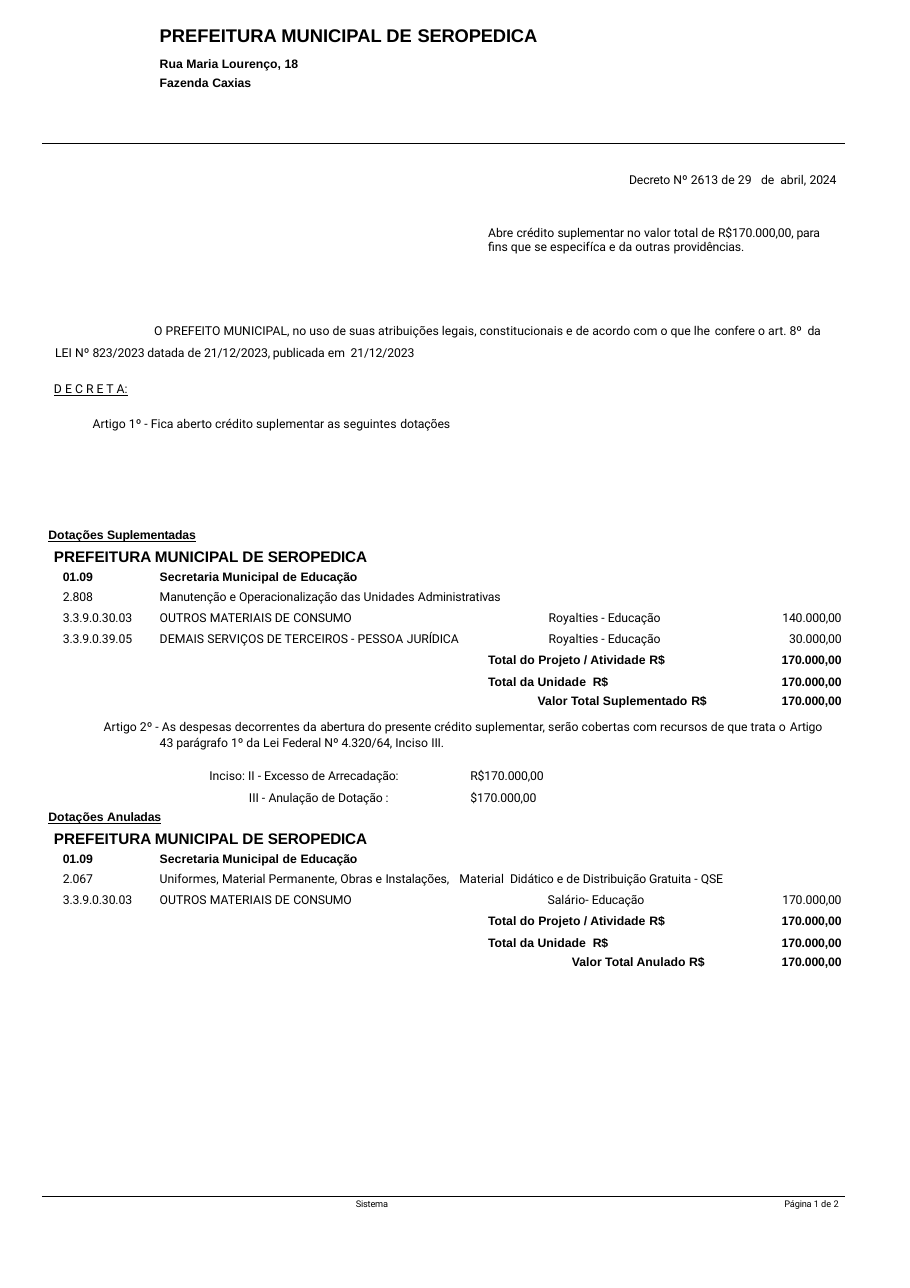
from collections import namedtuple
from dataclasses import dataclass

from lxml.etree import SubElement
from pptx import Presentation
from pptx.dml.color import RGBColor
from pptx.enum.shapes import MSO_CONNECTOR as CONN
from pptx.enum.text import MSO_ANCHOR as ANCHOR, MSO_AUTO_SIZE as AUTO, PP_ALIGN as ALIGN
from pptx.oxml.ns import qn
from pptx.util import Inches, Pt


@dataclass(frozen=True)
class Theme:
    ink: RGBColor = RGBColor(0, 0, 0)
    head_font: str = "Arial"
    body_font: str = "Roboto"
    title: float = 12
    section: float = 10
    body: float = 8
    small: float = 6
    rule: float = 0.75
    tight: float = -0.1


T = Theme()
Box = namedtuple("Box", "x y w h")
CITY = "PREFEITURA MUNICIPAL DE |SEROPEDICA"
CODE_INDENT, NAME_INDENT = 0.03, 0.11


def spaced_runs(runs):
    for item in [runs] if isinstance(runs, str) else runs:
        if isinstance(item, tuple):
            yield item
        else:
            for i, text in enumerate(item.split("|")):
                if text:
                    yield text, T.tight if i % 2 else 0


def write(p, runs, size=T.body, bold=False, underline=False, left=0, hang=0,
          line=None, before=None, align=ALIGN.LEFT):
    pPr = p._p.get_or_add_pPr()
    pPr.set("marL", str(Inches(left)))
    pPr.set("indent", str(Inches(hang)))
    p.alignment = align
    if line:
        p.line_spacing = line
    if before:
        p.space_before = Pt(before)
    for text, spacing in spaced_runs(runs):
        r = p.add_run()
        r.text = text
        f = r.font
        f.name = T.head_font if bold else T.body_font
        f.size, f.bold, f.underline = Pt(size), bold, underline
        f.color.rgb = T.ink
        if spacing:
            r._r.get_or_add_rPr().set("spc", str(round(spacing * 100)))


def clear_frame(tf):
    tf.word_wrap, tf.auto_size = True, AUTO.NONE
    tf.vertical_anchor = ANCHOR.TOP
    tf.margin_left = tf.margin_top = tf.margin_right = tf.margin_bottom = 0


def text_box(s, box, *paragraphs):
    tf = s.shapes.add_textbox(*map(Inches, box)).text_frame
    clear_frame(tf)
    for i, (runs, style) in enumerate(paragraphs):
        write(tf.add_paragraph() if i else tf.paragraphs[0], runs, **style)


def rule(s, x, y, w):
    line = s.shapes.add_connector(CONN.STRAIGHT, *map(Inches, (x, y, x + w, y)))
    line.line.color.rgb, line.line.width = T.ink, Pt(T.rule)
    SubElement(line._element.spPr, qn("a:effectLst"))


def header(s, box):
    title = s.shapes.title
    title.left, title.top = Inches(box.x + 1.07), Inches(box.y)
    title.width, title.height = Inches(4), Inches(0.22)
    clear_frame(title.text_frame)
    write(title.text_frame.paragraphs[0], CITY, size=T.title, bold=True)
    address = dict(bold=True, line=1.25)
    text_box(s, Box(box.x + 1.07, box.y + 0.26, 3, 0.34),
             ("Rua Maria Lourenço,| 18", address), ("Fazenda |Caxias", address))
    rule(s, box.x, box.y + box.h, box.w)


def preamble(s, box):
    text_box(s, Box(box.x + 5.23, box.y, 1.99, 0.16),
             (["|Decreto |Nº 2613 de 29", (" ", 4), "de", (" ", 1.8), "abril, |2024"], {}))
    text_box(s, Box(box.x + 3.95, box.y + 0.49, 3.11, 0.29),
             ("Abre crédito |suplementar |no valor total de |R$170.000,00, para |"
              "fins que se especifíca e da outras |providências.", dict(line=Pt(9.2))))
    text_box(s, Box(box.x, box.y + 1.31, box.w, 1.06),
             (["O PREFEITO MUNICIPAL, no uso de suas atribuições legais, constitucionais e "
               "de acordo com o que lhe |confere |o art. 8º", (" ", 1.5),
               "|da| LEI Nº |823/2023 datada| de |21/12/2023, publicada| em", (" ", 1.5),
               "|21/12/2023"],
              dict(left=0.02, hang=0.9, line=1.48)),
             ("D E C R E T A:", dict(left=0.01, underline=True, before=14.4)),
             ("Artigo 1º - Fica aberto crédito suplementar as seguintes |dotações",
              dict(left=0.36, before=13)))


def allocations(s, box, heading, widths, rows, merges):
    text_box(s, Box(box.x, box.y, 3, 0.36),
             (heading, dict(left=0.01, bold=True, underline=True)),
             (CITY, dict(left=0.06, size=T.section, bold=True, before=3.4)))
    area = Box(box.x + 0.11, box.y + 0.39, sum(widths), sum(row[0] for row in rows))
    table = s.shapes.add_table(len(rows), len(widths), *map(Inches, area)).table
    table.first_row = table.horz_banding = False
    for col, width in zip(table.columns, widths):
        col.width = Inches(width)
    for top, left, bottom, right in merges:
        table.cell(top, left).merge(table.cell(bottom, right))
    for i, (height, inset, bold, line, cells) in enumerate(rows):
        table.rows[i].height = Inches(height)
        for j in range(len(widths)):
            cell = table.cell(i, j)
            cell.fill.background()
            cell.margin_left = cell.margin_bottom = 0
            cell.margin_top = Inches(inset)
            cell.margin_right = Inches(0.03 if j == 3 else 0)
            p = cell.text_frame.paragraphs[0]
            if j in cells:
                runs, indent = cells[j]
                write(p, runs, bold=bold, left=indent, line=line,
                      align=ALIGN.RIGHT if j == 3 else ALIGN.LEFT)
            else:
                SubElement(p._p, qn("a:endParaRPr")).set("sz", str(T.body * 100))


def unit_row():
    return (0.16, 0, True, Pt(8.8),
            {0: ("|01.09", CODE_INDENT), 1: ("Secretaria Municipal de |Educação", NAME_INDENT)})


def activity_row(code, name, more=None):
    cells = {0: (code, CODE_INDENT), 1: (name, NAME_INDENT)}
    if more:
        cells[2] = (more, 0.02)
    return 0.19, 0.02, False, None, cells


def item_row(height, code, name, source, indent, amount):
    return (height, 0.02, False, None,
            {0: (code, CODE_INDENT), 1: (name, NAME_INDENT),
             2: (source, indent), 3: (amount, 0)})


def total_rows(first_height, first_inset, column, indent, label, label_indent):
    amount = ("|170.000,00", 0)
    return [
        (first_height, first_inset, True, None,
         {column: ("Total do Projeto / Atividade |R$", indent), 3: amount}),
        (0.19, 0.03, True, None,
         {column: (["Total da Unidade", (" ", 2), "|R$"], indent), 3: amount}),
        (0.15, 0.02, True, Pt(8.7), {column: (label, label_indent), 3: amount}),
    ]


def funding(s, box):
    text_box(s, Box(box.x, box.y + 0.01, 6.58, 0.32),
             ("Artigo 2º - As despesas decorrentes da |abertura |do |presente |crédito "
              "suplementar, serão cobertas com recursos de que trata o |Artigo |"
              "43| parágrafo |1º da Lei| Federal |Nº| 4.320/64, |Inciso |III.",
              dict(left=0.53, hang=-0.51, line=1.09)))
    text_box(s, Box(box.x + 0.97, box.y + 0.4, 2, 0.42),
             ("Inciso: II -| Excesso |de| Arrecadação:", dict(left=0.01, line=1.48)),
             ("III - |Anulação |de |Dotação :", dict(left=0.37, line=1.48)))
    text_box(s, Box(box.x + 3.34, box.y + 0.46, 1, 0.34),
             ("|R$170.000,00", dict(left=0.01)),
             ("|$170.000,00", dict(left=0.01, before=5)))


def footer(s, box):
    rule(s, box.x, box.y, box.w)
    for offset, text in ((2.85, "|Sistema"), (6.74, "|Página |1 de |2")):
        text_box(s, Box(box.x + offset, box.y + 0.02, 0.6, box.h), (text, dict(size=T.small)))


def main():
    prs = Presentation()
    prs.slide_width, prs.slide_height = Inches(8.26), Inches(11.69)
    s = prs.slides.add_slide(prs.slide_layouts[5])
    header(s, Box(0.38, 0.22, 7.29, 1.08))
    preamble(s, Box(0.48, 1.56, 7.09, 2.37))
    royalties = "Royalties - |Educação"
    supplies = ("|3.3.9.0.30.03", "OUTROS MATERIAIS DE |CONSUMO")
    allocations(
        s, Box(0.43, 4.79, 7.24, 1.65), "Dotações |Suplementadas", [0.8, 3.45, 1.96, 0.92],
        [unit_row(),
         activity_row("|2.808",
                      "|Manutenção |e |Operacionalização |das Unidades |Administrativas"),
         item_row(0.19, *supplies, royalties, 0.19, "|140.000,00"),
         item_row(0.16, "|3.3.9.0.39.05", "DEMAIS SERVIÇOS DE TERCEIROS - PESSOA |JURÍDICA",
                  royalties, 0.19, "|30.000,00"),
         *total_rows(0.22, 0.05, 0, 3.89, "Valor Total Suplementado |R$", 4.34)],
        [(0, 2, 1, 3)] + [(i, 0, i, 2) for i in (4, 5, 6)])
    funding(s, Box(0.92, 6.51, 6.6, 0.82))
    allocations(
        s, Box(0.43, 7.35, 7.24, 1.46), "Dotações |Anuladas", [0.8, 2.81, 2.71, 0.81],
        [unit_row(),
         activity_row("|2.067", "Uniformes, |Material |Permanente, Obras e |Instalações,",
                      ["Material", (" ", 1.8),
                       "|Didático |e de |Distribuição Gratuita |- |QSE"]),
         item_row(0.19, *supplies, "Salário- |Educação", 0.82, "|170.000,00"),
         *total_rows(0.19, 0.02, 2, 0.28, "Valor Total Anulado| R$", 1.04)],
        [(0, 3, 1, 3)])
    footer(s, Box(0.38, 10.86, 7.29, 0.12))
    prs.save("out.pptx")


if __name__ == "__main__":
    main()
